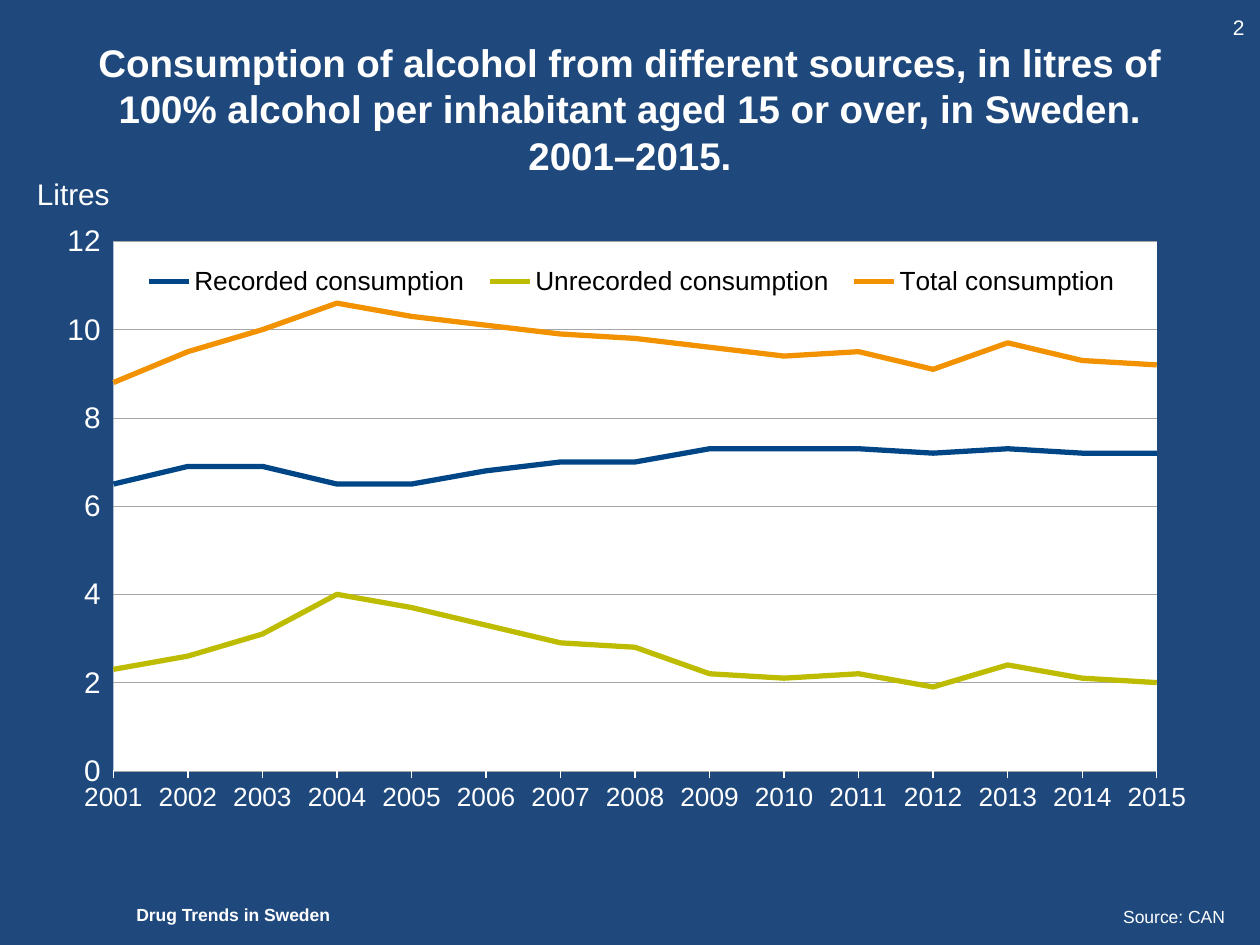
import pptx
import pptx.chart.data
import pptx.dml.color
import pptx.enum.chart
import pptx.enum.text
import pptx.oxml
import pptx.oxml.ns
import pptx.util

Pt = pptx.util.Pt
qn = pptx.oxml.ns.qn
ALIGN = pptx.enum.text.PP_ALIGN
ANCHOR = pptx.enum.text.MSO_ANCHOR
TICK = pptx.enum.chart.XL_TICK_MARK

COLORS = {
    "background": "1F497D",
    "white": "FFFFFF",
    "black": "000000",
    "grid": "A6A6A6",
    "recorded": "004687",
    "unrecorded": "BEBC00",
    "total": "F29200",
}
YEARS = [str(year) for year in range(2001, 2016)]
CONSUMPTION = {
    "recorded": ("Recorded consumption", (
        6.5, 6.9, 6.9, 6.5, 6.5, 6.8, 7, 7, 7.3, 7.3, 7.3, 7.2, 7.3, 7.2, 7.2)),
    "unrecorded": ("Unrecorded consumption", (
        2.3, 2.6, 3.1, 4, 3.7, 3.3, 2.9, 2.8, 2.2, 2.1, 2.2, 1.9, 2.4, 2.1, 2)),
    "total": ("Total consumption", (
        8.8, 9.5, 10, 10.6, 10.3, 10.1, 9.9, 9.8, 9.6, 9.4, 9.5, 9.1, 9.7, 9.3, 9.2)),
}


def rgb(name):
    return pptx.dml.color.RGBColor.from_string(COLORS[name])


def set_font(font, size, color="white", bold=False):
    font.name = "Arial"
    font.size = Pt(size)
    font.bold = bold
    font.color.rgb = rgb(color)


def set_line(line, color, width):
    line.color.rgb = rgb(color)
    line.width = Pt(width)


def write_text(shape, text, *, box, size, bold=False, align=ALIGN.LEFT, anchor=ANCHOR.TOP):
    """Place a text box or placeholder at box (points) and fill it."""
    shape.left, shape.top, shape.width, shape.height = map(Pt, box)
    frame = shape.text_frame
    frame.word_wrap = True
    frame.auto_size = pptx.enum.text.MSO_AUTO_SIZE.NONE
    frame.vertical_anchor = anchor
    paragraph = frame.paragraphs[0]
    paragraph.text = text
    paragraph.alignment = align
    set_font(paragraph.runs[0].font, size, bold=bold)


def add_label(slide, text, **style):
    write_text(slide.shapes.add_textbox(0, 0, 0, 0), text, **style)


def chart_xml(tag, content):
    return pptx.oxml.parse_xml(
        f'<c:{tag} {pptx.oxml.ns.nsdecls("c", "a")}>{content}</c:{tag}>')


def manual_layout(x, y, w, h, inner=False):
    target = '<c:layoutTarget val="inner"/>' if inner else ""
    return chart_xml("layout", f'<c:manualLayout>{target}'
                     '<c:xMode val="edge"/><c:yMode val="edge"/>'
                     f'<c:x val="{x}"/><c:y val="{y}"/><c:w val="{w}"/><c:h val="{h}"/>'
                     '</c:manualLayout>')


def format_axes(chart):
    years, litres = chart.category_axis, chart.value_axis
    for axis, size in ((years, 15), (litres, 17)):
        set_font(axis.tick_labels.font, size)
        axis.major_tick_mark = TICK.OUTSIDE
        axis.minor_tick_mark = TICK.NONE
    set_line(years.format.line, "white", 0.75)
    litres.format.line.fill.background()
    litres.minimum_scale, litres.maximum_scale, litres.major_unit = 0, 12, 2
    litres.tick_labels.number_format = "0"
    litres.tick_labels.number_format_is_linked = False
    set_line(litres.major_gridlines.format.line, "grid", 0.25)


def format_plot_area(chart):
    """Fix the white plot area and start the lines on the value axis."""
    area = chart.element.find(".//" + qn("c:plotArea"))
    for layout in area.findall(qn("c:layout")):
        area.remove(layout)
    area.insert(0, manual_layout(0.064, 0.056, 0.898, 0.849, inner=True))
    area.append(chart_xml("spPr", f'<a:solidFill><a:srgbClr val="{COLORS["white"]}"/>'
                          '</a:solidFill><a:ln><a:noFill/></a:ln>'))
    value_axis = area.find(qn("c:valAx"))
    for crossing in value_axis.findall(qn("c:crossBetween")):
        value_axis.remove(crossing)
    crossing = chart_xml("crossBetween", "")
    crossing.set("val", "midCat")
    value_axis.find(qn("c:crosses")).addnext(crossing)


def format_legend(chart):
    chart.has_legend = True
    legend = chart.legend
    legend.position = pptx.enum.chart.XL_LEGEND_POSITION.RIGHT
    legend.include_in_layout = False
    set_font(legend.font, 15, "black")
    element = chart.element.find(".//" + qn("c:legend"))
    for layout in element.findall(qn("c:layout")):
        element.remove(layout)
    element.find(qn("c:legendPos")).addnext(manual_layout(0.08, 0.08, 0.86, 0.08))


def add_consumption_chart(slide, box):
    data = pptx.chart.data.CategoryChartData()
    data.categories = YEARS
    for name, litres in CONSUMPTION.values():
        data.add_series(name, litres)
    chart = slide.shapes.add_chart(
        pptx.enum.chart.XL_CHART_TYPE.LINE, *map(Pt, box), data).chart
    chart.has_title = False
    set_font(chart.font, 15)
    chart.plots[0].vary_by_categories = False
    for color, series in zip(CONSUMPTION, chart.plots[0].series):
        series.smooth = False
        series.marker.style = pptx.enum.chart.XL_MARKER_STYLE.NONE
        set_line(series.format.line, color, 3)
    format_axes(chart)
    format_plot_area(chart)
    format_legend(chart)


def main():
    deck = pptx.Presentation()
    deck.slide_width, deck.slide_height = Pt(720), Pt(540)
    slide = deck.slides.add_slide(deck.slide_layouts[5])
    slide.background.fill.solid()
    slide.background.fill.fore_color.rgb = rgb("background")

    write_text(slide.shapes.title,
               "Consumption of alcohol from different sources, in litres of 100% alcohol "
               "per inhabitant aged 15 or over, in Sweden. 2001–2015.",
               box=(36, 22, 648, 80), size=22, bold=True,
               align=ALIGN.CENTER, anchor=ANCHOR.MIDDLE)
    add_consumption_chart(slide, (22.3, 118, 664, 356.4))
    add_label(slide, "2", box=(697.5, 4.5, 20, 22), size=12)
    add_label(slide, "Litres", box=(14, 96.5, 67, 28), size=17, anchor=ANCHOR.MIDDLE)
    add_label(slide, "Drug Trends in Sweden", box=(70.8, 513.3, 150, 19.4), size=10, bold=True)
    add_label(slide, "Source: CAN", box=(528, 514.3, 179, 19.4), size=10, align=ALIGN.RIGHT)
    deck.save("out.pptx")


if __name__ == "__main__":
    main()
